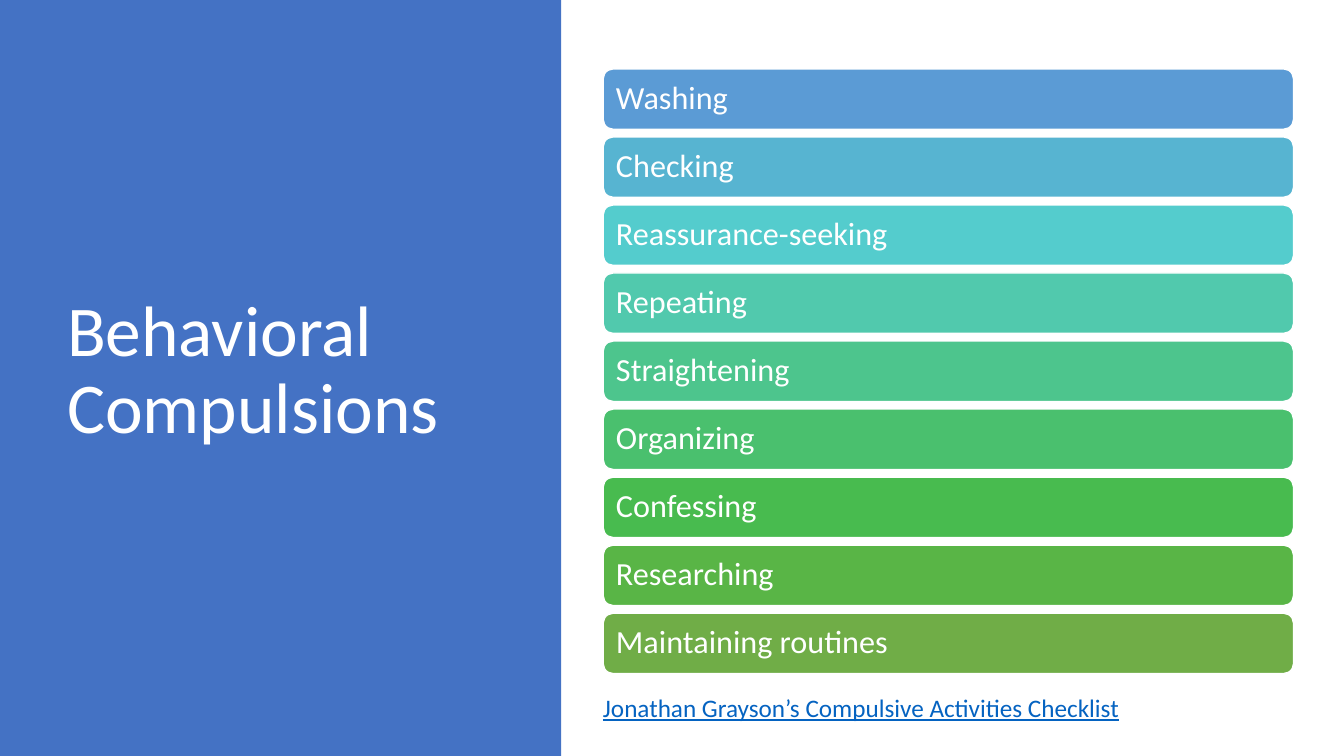
from dataclasses import dataclass

from pptx import Presentation
from pptx.dml.color import RGBColor
from pptx.enum.shapes import MSO_SHAPE as Shape
from pptx.enum.text import MSO_ANCHOR as Anchor, MSO_AUTO_SIZE as AutoSize, PP_ALIGN as Align
from pptx.util import Inches, Pt


@dataclass(frozen=True)
class Theme:
    """Colours, font and type sizes of the slide."""
    font: str = "Calibri"
    panel: str = "4472C4"
    light: str = "FFFFFF"
    link: str = "0563C1"
    title_size: int = 51
    bar_size: int = 23
    link_size: int = 18


class ChecklistSlide:
    """Places elements on a slide with a grid of 80 columns by 45 rows."""

    COLUMNS, ROWS = 80, 45
    CELL = Inches(1 / 6)

    def __init__(self, deck, theme):
        """Set the slide size and add a title-only slide."""
        deck.slide_width = self.COLUMNS * self.CELL
        deck.slide_height = self.ROWS * self.CELL
        self.theme = theme
        self.slide = deck.slides.add_slide(deck.slide_layouts[5])
        self.shapes = self.slide.shapes

    def box(self, *cells):
        """Turn grid units into lengths."""
        return [round(cell * self.CELL) for cell in cells]

    def label(self, frame, text, size, color, spacing=1.0, anchor=Anchor.MIDDLE):
        """Fill a text frame with one left-aligned paragraph."""
        frame.text = text
        frame.word_wrap = True
        frame.auto_size = AutoSize.NONE
        frame.vertical_anchor = anchor
        paragraph = frame.paragraphs[0]
        paragraph.alignment = Align.LEFT
        paragraph.line_spacing = spacing
        paragraph.font.name = self.theme.font
        paragraph.font.size = Pt(size)
        paragraph.font.color.rgb = RGBColor.from_string(color)
        return paragraph

    def block(self, kind, cells, fill):
        """Add a flat filled shape without an outline."""
        block = self.shapes.add_shape(kind, *self.box(*cells))
        block.shadow.inherit = False
        block.fill.solid()
        block.fill.fore_color.rgb = RGBColor.from_string(fill)
        block.line.fill.background()
        return block

    def panel(self, columns):
        """Add the full-height panel behind the title."""
        panel = self.block(Shape.RECTANGLE, (0, 0, columns, self.ROWS), self.theme.panel)
        title = self.shapes.title.element
        title.addprevious(panel.element)

    def title(self, text, cells):
        """Move and format the title placeholder."""
        title = self.shapes.title
        title.left, title.top, title.width, title.height = self.box(*cells)
        self.label(title.text_frame, text, self.theme.title_size, self.theme.light, 0.9)

    def bar(self, text, cells, fill):
        """Add a rounded bar with its label inside."""
        bar = self.block(Shape.ROUNDED_RECTANGLE, cells, fill)
        bar.line.color.rgb = RGBColor.from_string(self.theme.light)
        bar.line.width = Pt(1)
        bar.text_frame.margin_left = Inches(0.1)
        self.label(bar.text_frame, text, self.theme.bar_size, self.theme.light, 0.9)

    def reference(self, text, cells):
        """Add the underlined reference line."""
        reference = self.shapes.add_textbox(*self.box(*cells))
        paragraph = self.label(reference.text_frame, text, self.theme.link_size,
                               self.theme.link, anchor=Anchor.TOP)
        paragraph.font.underline = True


COMPULSIONS = {
    "Washing": "5B9BD5",
    "Checking": "57B4D1",
    "Reassurance-seeking": "54CCCD",
    "Repeating": "51C9AD",
    "Straightening": "4DC58D",
    "Organizing": "4AC06E",
    "Confessing": "48BB4F",
    "Researching": "59B546",
    "Maintaining routines": "70AD47",
}


def main():
    """Build the slide and save it."""
    deck = Presentation()
    slide = ChecklistSlide(deck, Theme())
    slide.panel(33.4)
    slide.title("Behavioral Compulsions", (3.4, 4.1, 25, 36.1))
    first_row, pitch = 4.1, 4.05
    for index, (compulsion, fill) in enumerate(COMPULSIONS.items()):
        slide.bar(compulsion, (35.9, first_row + index * pitch, 41.1, 3.6), fill)
    slide.reference("Jonathan Grayson’s Compulsive Activities Checklist", (35.3, 40.9, 44, 2.4))
    deck.save("out.pptx")


if __name__ == "__main__":
    main()
